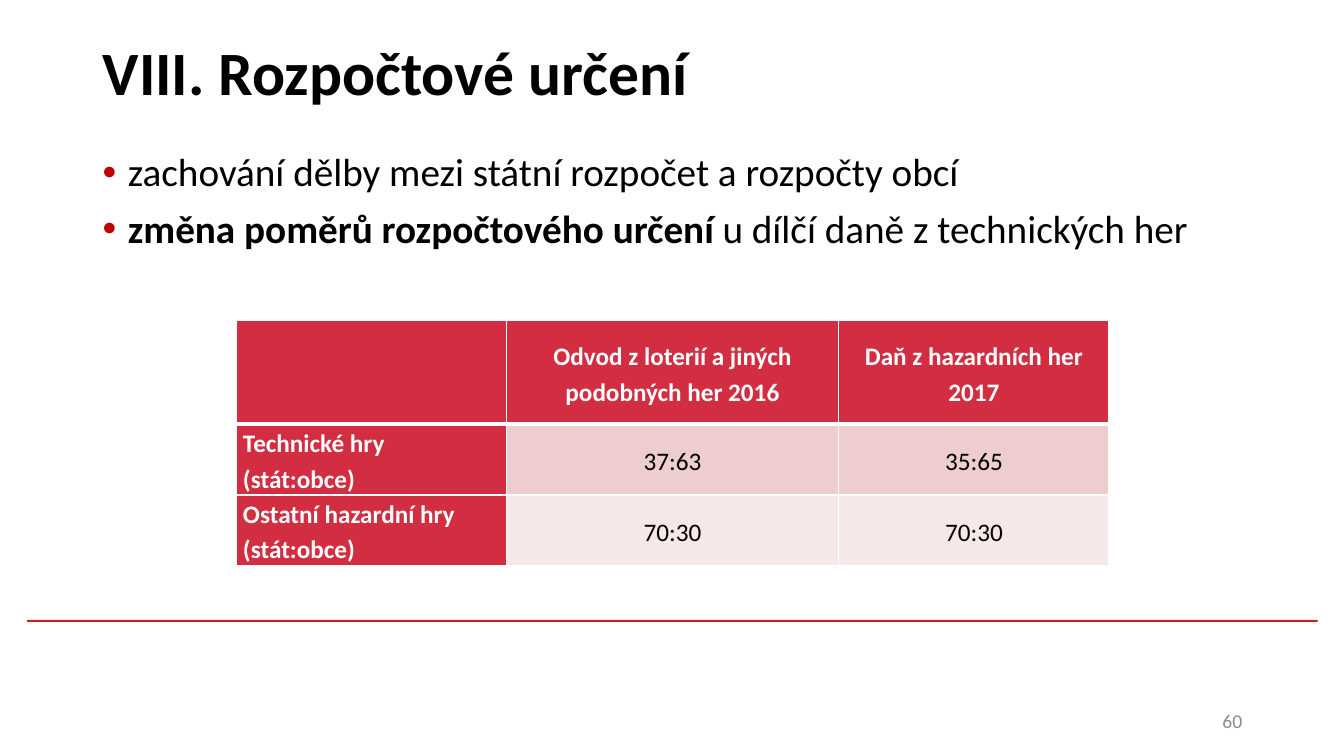
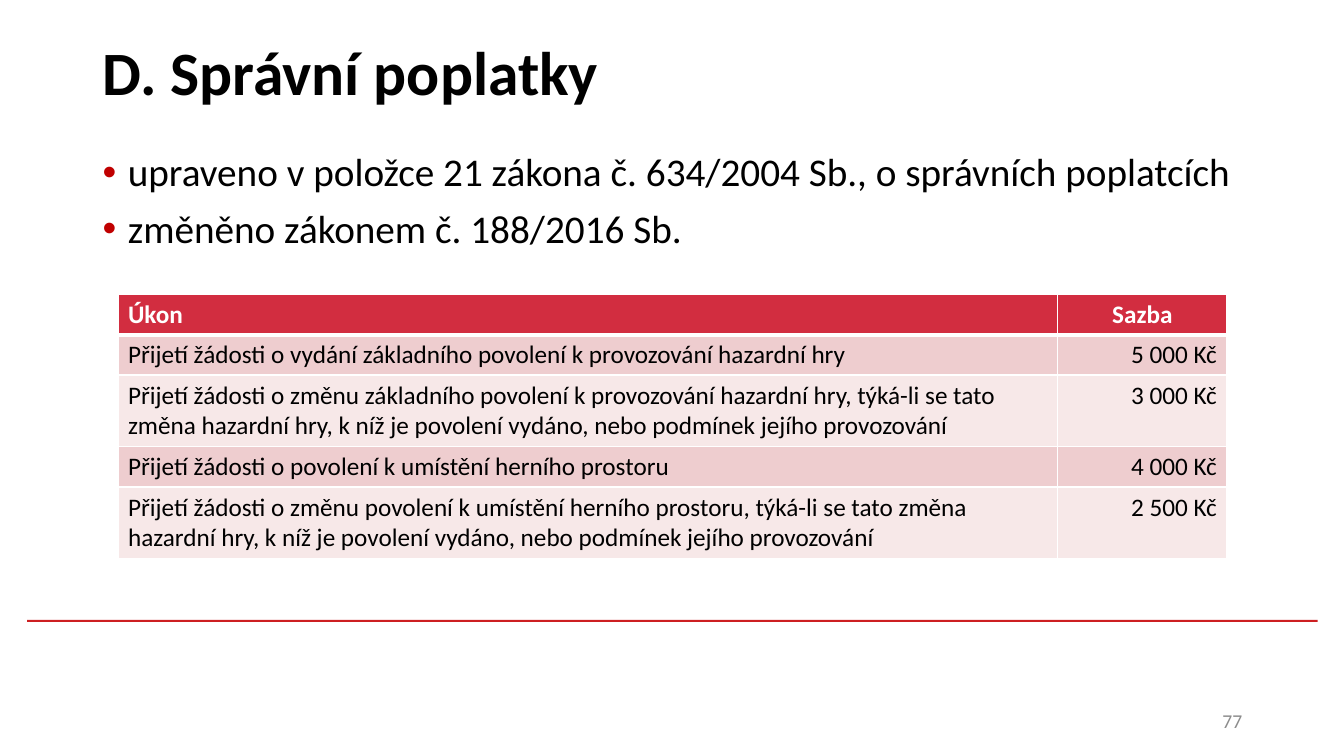
from lxml import etree
from pptx import Presentation
from pptx.dml.color import RGBColor
from pptx.enum import shapes, text
from pptx.oxml import ns
from pptx.util import Inches, Pt

FONT = "Calibri"
BLACK, WHITE, GREY = "000000", "FFFFFF", "8C8C8C"
RULE, BULLET, HEAD = "CD1F21", "C00000", "D22D40"
BANDS = ["EECDCF", "F7E8E8"]
LEFT, WIDTH = 0.92, 11.5
L, C, R = text.PP_ALIGN.LEFT, text.PP_ALIGN.CENTER, text.PP_ALIGN.RIGHT
TOP, MID = text.MSO_ANCHOR.TOP, text.MSO_ANCHOR.MIDDLE


def rgb(code):
    return RGBColor.from_string(code)


def node(up, tag, **attrs):
    return etree.SubElement(up, ns.qn("a:" + tag), **attrs)


def add_bullet(para):
    props = para._p.get_or_add_pPr()
    props.set("marL", str(Inches(0.25)))
    props.set("indent", str(-Inches(0.25)))
    node(node(props, "buClr"), "srgbClr", val=BULLET)
    node(props, "buFont", typeface="Arial")
    node(props, "buChar", char="•")


def put(frame, lines, size=18, color=BLACK, bold=False, align=L,
        line=1.0, space=0, bullet=False):
    """Write one paragraph per line; parts between ** marks are bold."""
    for i, words in enumerate(lines.split("\n")):
        para = frame.add_paragraph() if i else frame.paragraphs[0]
        if bullet:
            add_bullet(para)
        para.alignment, para.line_spacing = align, line
        para.space_before = Pt(space if i else 0)
        for j, part in enumerate(words.split("**")):
            if part:
                run = para.add_run()
                run.text = part
                font = run.font
                font.name, font.size = FONT, Pt(size)
                font.bold = bold or j % 2 == 1
                font.color.rgb = rgb(color)


def add_text(slide, box, lines, anchor=TOP, **style):
    frame = slide.shapes.add_textbox(*map(Inches, box)).text_frame
    frame.word_wrap = True
    frame.vertical_anchor = anchor
    put(frame, lines, **style)


def add_edges(cell, row):
    """Draw white borders, thick between the header and the body."""
    props = cell._tc.get_or_add_tcPr()
    thick = {"lnB": row == 0, "lnT": row == 1}
    for i, side in enumerate(["lnL", "lnR", "lnT", "lnB"]):
        edge = etree.Element(ns.qn("a:" + side),
                             w=str(Pt(3 if thick.get(side) else 1)))
        node(node(edge, "solidFill"), "srgbClr", val=WHITE)
        props.insert(i, edge)


def add_grid(slide, spot, cols, rows, data, aligns, pad, anchor=TOP,
             line=1.0, side=False):
    """Add a banded table; side marks the first column as headers."""
    box = [*spot, sum(cols), sum(rows)]
    grid = slide.shapes.add_table(len(rows), len(cols),
                                  *map(Inches, box)).table
    grid.first_row = grid.horz_banding = False
    for col, width in zip(grid.columns, cols):
        col.width = Inches(width)
    for r, (row, height) in enumerate(zip(grid.rows, rows)):
        row.height = Inches(height)
        for c, cell in enumerate(row.cells):
            head = r == 0 or (side and c == 0)
            cell.margin_left = cell.margin_right = Inches(pad[0])
            cell.margin_top = cell.margin_bottom = Inches(pad[1])
            cell.vertical_anchor = anchor
            cell.fill.solid()
            cell.fill.fore_color.rgb = rgb(HEAD if head else BANDS[(r - 1) % 2])
            add_edges(cell, r)
            align = C if r == 0 and c else aligns[c]
            put(cell.text_frame, data[r][c], color=WHITE if head else BLACK,
                bold=head, align=align, line=line)


def add_page(deck, title, points, number):
    slide = deck.slides.add_slide(deck.slide_layouts[6])
    rule = slide.shapes.add_shape(shapes.MSO_SHAPE.RECTANGLE, Inches(0.27),
                                  Inches(6.15), Inches(12.8), Inches(0.02))
    rule.shadow.inherit = False
    rule.fill.solid()
    rule.fill.fore_color.rgb = rgb(RULE)
    rule.line.fill.background()
    add_text(slide, (LEFT, 0.02, WIDTH, 1.45), title, MID, size=44,
             bold=True, line=0.9)
    add_text(slide, (LEFT, 1.47, WIDTH, 4.57), points, size=28, line=0.9,
             space=10, bullet=True)
    add_text(slide, (LEFT + WIDTH - 3, 6.95, 3, 0.4), number, MID, size=14,
             color=GREY, align=R)
    return slide


def add_shares(deck):
    slide = add_page(
        deck, "VIII. Rozpočtové určení",
        "zachování dělby mezi státní rozpočet a rozpočty obcí\n"
        "**změna poměrů rozpočtového určení **u dílčí daně z technických her",
        "60")
    data = [
        ["", "Odvod z loterií a jiných podobných her 2016",
         "Daň z hazardních her 2017"],
        ["Technické hry (stát:obce)", "37:63", "35:65"],
        ["Ostatní hazardní hry\n(stát:obce)", "70:30", "70:30"],
    ]
    add_grid(slide, (2.34, 3.18), [2.68, 3.3, 2.68], [1.03, 0.7, 0.7], data,
             [L, C, C], (0.07, 0), MID, line=1.15, side=True)


def add_fees(deck):
    slide = add_page(
        deck, "D. Správní poplatky",
        "upraveno v položce 21 zákona č. 634/2004 Sb., o správních poplatcích\n"
        "změněno zákonem č. 188/2016 Sb.", "77")
    tail = ("hazardní hry, k níž je povolení vydáno, "
            "nebo podmínek jejího provozování")
    data = [
        ["Úkon", "Sazba"],
        ["Přijetí žádosti o vydání základního povolení "
         "k provozování hazardní hry", "5 000 Kč"],
        ["Přijetí žádosti o změnu základního povolení k provozování "
         "hazardní hry, týká-li se tato změna " + tail, "3 000 Kč"],
        ["Přijetí žádosti o povolení k umístění herního prostoru", "4 000 Kč"],
        ["Přijetí žádosti o změnu povolení k umístění herního prostoru, "
         "týká-li se tato změna " + tail, "2 500 Kč"],
    ]
    add_grid(slide, (1.17, 2.92), [9.32, 1.68], [0.4, 0.4, 0.71, 0.4, 0.71],
             data, [L, R], (0.1, 0.05))


def main():
    deck = Presentation()
    deck.slide_width, deck.slide_height = Inches(13.33), Inches(7.5)
    add_shares(deck)
    add_fees(deck)
    deck.save("out.pptx")


if __name__ == "__main__":
    main()
